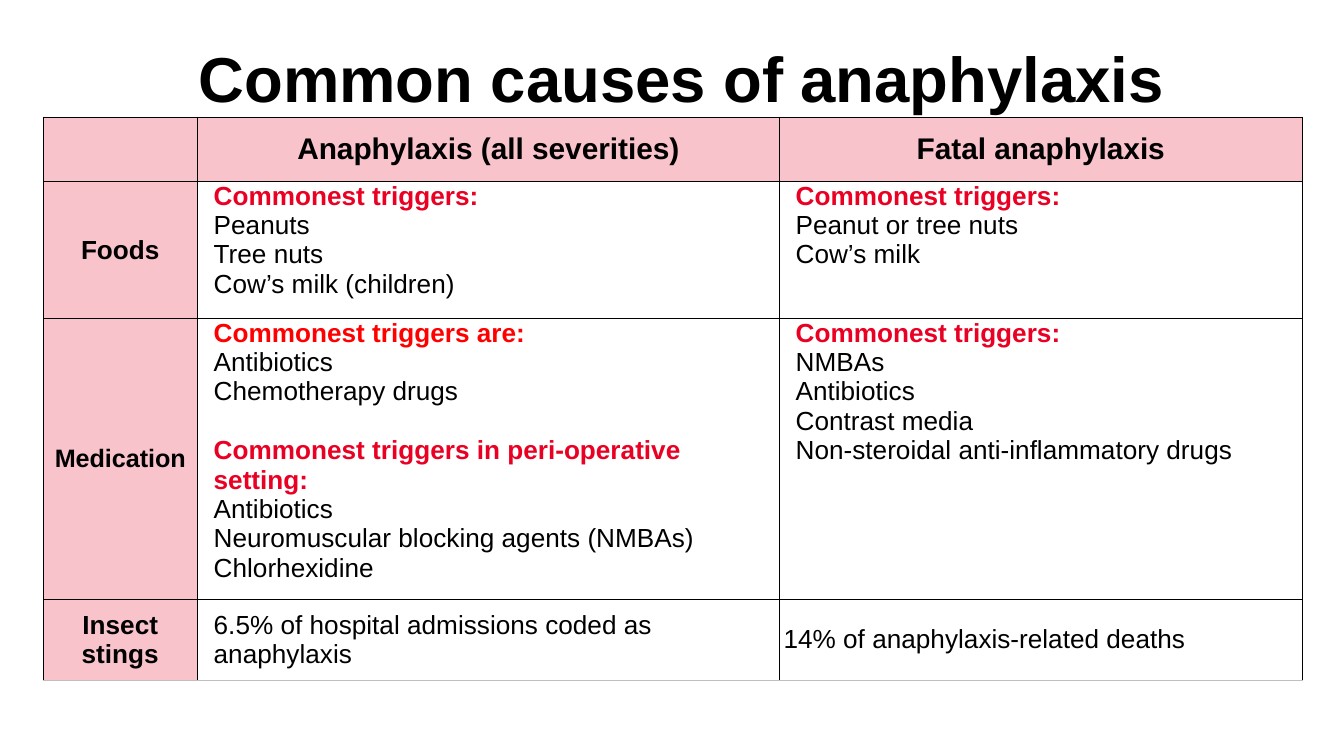
from lxml.etree import SubElement as Sub
from pptx import Presentation
from pptx.dml.color import RGBColor as RGB
from pptx.enum.text import MSO_ANCHOR as Anchor, PP_ALIGN as Align
from pptx.oxml.ns import qn
from pptx.util import Inches, Pt

BLACK, PINK, RED, BRIGHT, GRAY = "000000", "F9C3CC", "E90023", "FF0000", "BFBFBF"
COLS = [1.15, 4.33, 3.89]
ROWS = [0.48, 1.02, 1.84, 0.61]
LABELS = [("Foods", 14), ("Medication", 13.5), ("Insect stings", 14)]
HEADS = ["Anaphylaxis (all severities)", "Fatal anaphylaxis"]
MAIN = "Commonest triggers:"

# Lists of triggers by (row, column); a colour marks a heading
LISTS = {
    (1, 1): [(MAIN, RED), "Peanuts", "Tree nuts", "Cow’s milk (children)"],
    (1, 2): [(MAIN, RED), "Peanut or tree nuts", "Cow’s milk"],
    (2, 1): [("Commonest triggers are:", BRIGHT), "Antibiotics",
             "Chemotherapy drugs",
             ("Commonest triggers in peri-operative setting:", RED),
             "Antibiotics",
             "Neuromuscular blocking agents (NMBAs) Chlorhexidine"],
    (2, 2): [(MAIN, RED), "NMBAs", "Antibiotics", "Contrast media",
             "Non-steroidal anti-inflammatory drugs"],
}


def color(code):
    return RGB.from_string(code)


def style(para, size, bold=False, code=BLACK, align=Align.LEFT):
    para.alignment = align
    for run in para.runs:
        font = run.font
        font.name, font.size, font.bold = "Arial", Pt(size), bold
        font.color.rgb = color(code)


def indent(para):
    para._p.get_or_add_pPr().set("marL", str(Inches(0.09)))


def border(cell, side, code, width):
    line = Sub(cell._tc.get_or_add_tcPr(), qn("a:ln" + side), w=str(Pt(width)))
    fill = Sub(line, qn("a:solidFill"))
    Sub(fill, qn("a:srgbClr"), val=code)


def format_cell(cell, pink, last):
    cell.margin_left = cell.margin_right = Inches(0.03)
    cell.margin_top = cell.margin_bottom = 0
    for side in "LRT":
        border(cell, side, BLACK, 0.38)
    border(cell, "B", *((GRAY, 0.6) if last else (BLACK, 0.38)))
    if pink:
        cell.fill.solid()
        cell.fill.fore_color.rgb = color(PINK)
    else:
        cell.fill.background()


def put_text(cell, text, size, bold=False, align=Align.LEFT):
    cell.text_frame.text = text
    cell.vertical_anchor = Anchor.MIDDLE
    style(cell.text_frame.paragraphs[0], size, bold, align=align)


def put_list(cell, items):
    frame = cell.text_frame
    for i, item in enumerate(items):
        head = isinstance(item, tuple)
        text, code = item if head else (item, BLACK)
        para = frame.add_paragraph() if i else frame.paragraphs[0]
        para.text = text
        indent(para)
        style(para, 14, head, code)
        if head and i:
            para.space_before = Pt(15.7)


def add_title(slide):
    box = slide.shapes.add_textbox(Inches(0.75), Inches(0.24),
                                   Inches(8.74), Inches(0.75))
    frame = box.text_frame
    frame.word_wrap = True
    frame.margin_left = 0
    frame.vertical_anchor = Anchor.TOP
    frame.text = "Common causes of anaphylaxis"
    style(frame.paragraphs[0], 34, True, align=Align.CENTER)


def add_grid(slide):
    table = slide.shapes.add_table(
        len(ROWS), len(COLS), Inches(0.32), Inches(0.87),
        Inches(9.36), Inches(4.2)).table
    table.first_row = table.horz_banding = False
    for col, width in zip(table.columns, COLS):
        col.width = Inches(width)
    for row, height in zip(table.rows, ROWS):
        row.height = Inches(height)
    for r in range(len(ROWS)):
        for c in range(len(COLS)):
            format_cell(table.cell(r, c), r == 0 or c == 0, r == len(ROWS) - 1)
    return table


def main():
    deck = Presentation()
    deck.slide_width = Inches(10)
    deck.slide_height = deck.slide_width * 9 // 16
    slide = deck.slides.add_slide(deck.slide_layouts[6])
    add_title(slide)
    table = add_grid(slide)

    # Column heads and row labels
    for c, text in enumerate(HEADS, 1):
        put_text(table.cell(0, c), text, 16, True, Align.CENTER)
    for r, (text, size) in enumerate(LABELS, 1):
        put_text(table.cell(r, 0), text, size, True, Align.CENTER)

    # Triggers
    for (r, c), items in LISTS.items():
        put_list(table.cell(r, c), items)

    # Insect sting figures
    share = table.cell(3, 1)
    put_text(share, "6.5% of hospital admissions coded as anaphylaxis", 14)
    indent(share.text_frame.paragraphs[0])
    put_text(table.cell(3, 2), "14% of anaphylaxis-related deaths", 14)

    deck.save("out.pptx")


if __name__ == "__main__":
    main()
